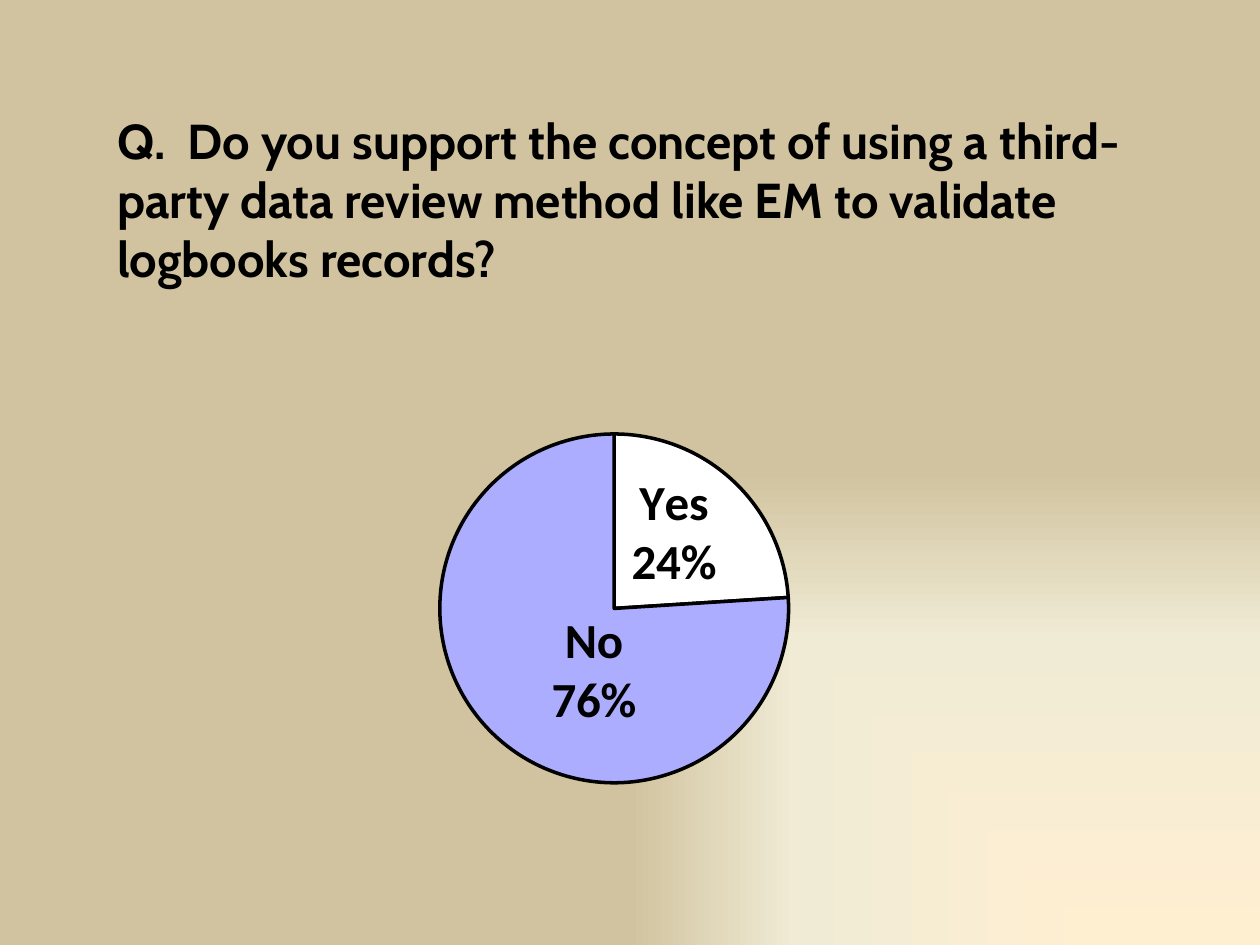
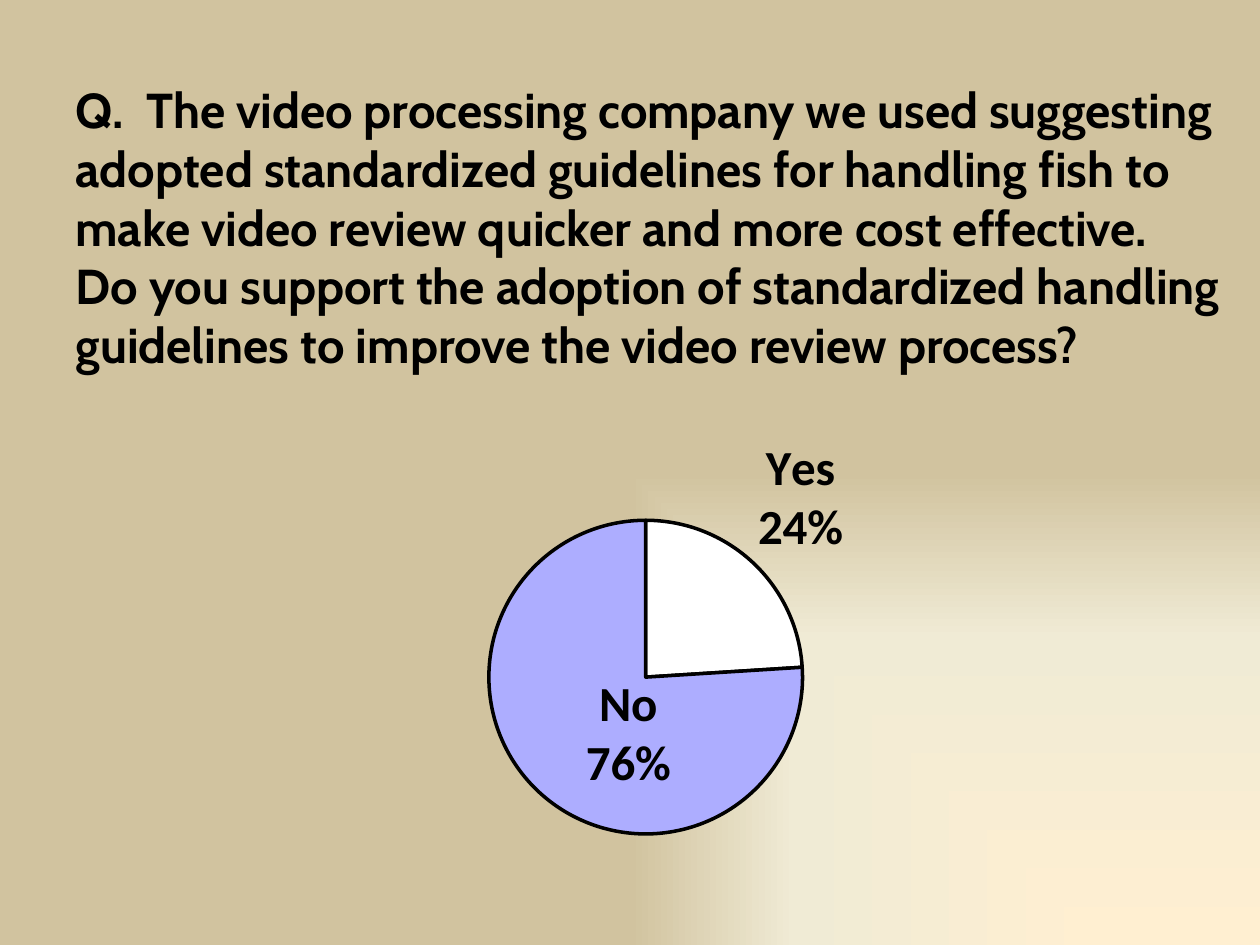
from dataclasses import dataclass

from lxml import etree
from pptx import Presentation
from pptx.chart.data import CategoryChartData
from pptx.dml.color import RGBColor
from pptx.enum import chart as charts, text
from pptx.oxml import ns, parse_xml
from pptx.util import Inches, Pt


@dataclass(frozen=True)
class Theme:
    ink: str = "000000"
    yes: str = "FFFFFF"
    no: str = "ADADFF"
    background: tuple = ((0, "FFEFD1"), (65, "F0EBD5"), (100, "D1C39F"))
    question_font: str = "Cabin"
    label_font: str = "Calibri"
    chart_font: str = "Cambria"
    text_size: int = 28
    chart_size: int = 10
    outline: float = 2


THEME = Theme()
ANSWERS = {"Yes": 24, "No": 76}
CENTER = charts.XL_LABEL_POSITION.CENTER
OUTSIDE = charts.XL_LABEL_POSITION.OUTSIDE_END


def rgb(value):
    return RGBColor.from_string(value)


def style_font(font, name, size, bold=True):
    font.name = name
    font.size = Pt(size)
    font.bold = bold
    font.color.rgb = rgb(THEME.ink)


def paint_background(master):
    master.background.fill.solid()
    solid = next(master.element.iter(ns.qn("a:solidFill")))
    stops = "".join(
        f'<a:gs pos="{place * 1000}"><a:srgbClr val="{color}"/></a:gs>'
        for place, color in THEME.background
    )
    glow = parse_xml(
        f'<a:gradFill {ns.nsdecls("a")} rotWithShape="1"><a:gsLst>{stops}</a:gsLst>'
        '<a:path path="rect"><a:fillToRect l="100000" t="100000"/></a:path></a:gradFill>'
    )
    solid.getparent().replace(solid, glow)


def add_question(slide, wording, left, top, width):
    question = slide.shapes.title
    question.left, question.top = Inches(left), Inches(top)
    question.width, question.height = Inches(width), Inches(0.67)
    frame = question.text_frame
    frame.text = wording
    frame.word_wrap = True
    frame.auto_size = text.MSO_AUTO_SIZE.NONE
    frame.vertical_anchor = text.MSO_ANCHOR.TOP
    paragraph = frame.paragraphs[0]
    paragraph.alignment = text.PP_ALIGN.LEFT
    style_font(paragraph.font, THEME.question_font, THEME.text_size)


def add_layout(parent, index, **settings):
    for old in parent.findall(ns.qn("c:layout")):
        parent.remove(old)
    layout = etree.Element(ns.qn("c:layout"))
    manual = etree.SubElement(layout, ns.qn("c:manualLayout"))
    for tag, value in settings.items():
        etree.SubElement(manual, ns.qn(f"c:{tag}")).set("val", str(value))
    parent.insert(index, layout)


def center_pie(chart, diameter, width, height):
    w, h = round(diameter / width, 3), round(diameter / height, 3)
    plot_area = next(chart.element.iter(ns.qn("c:plotArea")))
    add_layout(
        plot_area, 0, layoutTarget="inner", xMode="edge", yMode="edge",
        x=(1 - w) / 2, y=(1 - h) / 2, w=w, h=h,
    )


def show_answer(labels):
    labels.show_value = False
    labels.show_category_name = True
    labels.show_percentage = True
    labels.number_format = "0%"
    labels.number_format_is_linked = False
    style_font(labels.font, THEME.label_font, THEME.text_size)


def place_label(series, index, position, shift_x, shift_y):
    label = series.points[index].data_label
    style_font(label.font, THEME.label_font, THEME.text_size)
    label.position = position
    element = [
        e for e in series._element.iter(ns.qn("c:dLbl"))
        if e.find(ns.qn("c:idx")).get("val") == str(index)
    ][0]
    for tag, shown in (("showVal", 0), ("showCatName", 1), ("showPercent", 1)):
        element.find(ns.qn(f"c:{tag}")).set("val", str(shown))
    if shift_x or shift_y:
        add_layout(element, 1, x=shift_x, y=shift_y)


def add_answers(slide, left, top, width, height, diameter, placements):
    data = CategoryChartData()
    data.categories = list(ANSWERS)
    data.add_series("Series 1", list(ANSWERS.values()))
    chart = slide.shapes.add_chart(
        charts.XL_CHART_TYPE.PIE, Inches(left), Inches(top),
        Inches(width), Inches(height), data,
    ).chart
    chart.has_legend = False
    chart.has_title = False
    style_font(chart.font, THEME.chart_font, THEME.chart_size, bold=False)
    center_pie(chart, diameter, width, height)

    pie = chart.plots[0]
    pie.vary_by_categories = True
    answers = pie.series[0]
    show_answer(answers.data_labels)
    for index, color in enumerate((THEME.yes, THEME.no)):
        slice_format = answers.points[index].format
        slice_format.fill.solid()
        slice_format.fill.fore_color.rgb = rgb(color)
        slice_format.line.color.rgb = rgb(THEME.ink)
        slice_format.line.width = Pt(THEME.outline)
        place_label(answers, index, *placements[index])


def main():
    deck = Presentation()
    deck.slide_width, deck.slide_height = Inches(10), Inches(7.5)
    paint_background(deck.slide_master)
    title_only = deck.slide_layouts[5]

    review = deck.slides.add_slide(title_only)
    add_question(
        review,
        "Q.  Do you support the concept of using a third-party data review "
        "method like EM to validate logbooks records?",
        0.83, 0.83, 8.25,
    )
    add_answers(
        review, 1.75, 2.58, 6.25, 4.5, 2.77,
        [(CENTER, 0, -0.02), (CENTER, 0.05, 0)],
    )

    handling = deck.slides.add_slide(title_only)
    add_question(
        handling,
        "Q.  The video processing company we used suggesting adopted "
        "standardized guidelines for handling fish to make video review "
        "quicker and more cost effective.  Do you support the adoption of "
        "standardized handling guidelines to improve the video review process?",
        0.5, 0.58, 9.33,
    )
    add_answers(
        handling, 2.25, 3.25, 5.75, 4.25, 2.49,
        [(OUTSIDE, 0, 0), (CENTER, 0.05, 0)],
    )

    deck.save("out.pptx")


if __name__ == "__main__":
    main()
